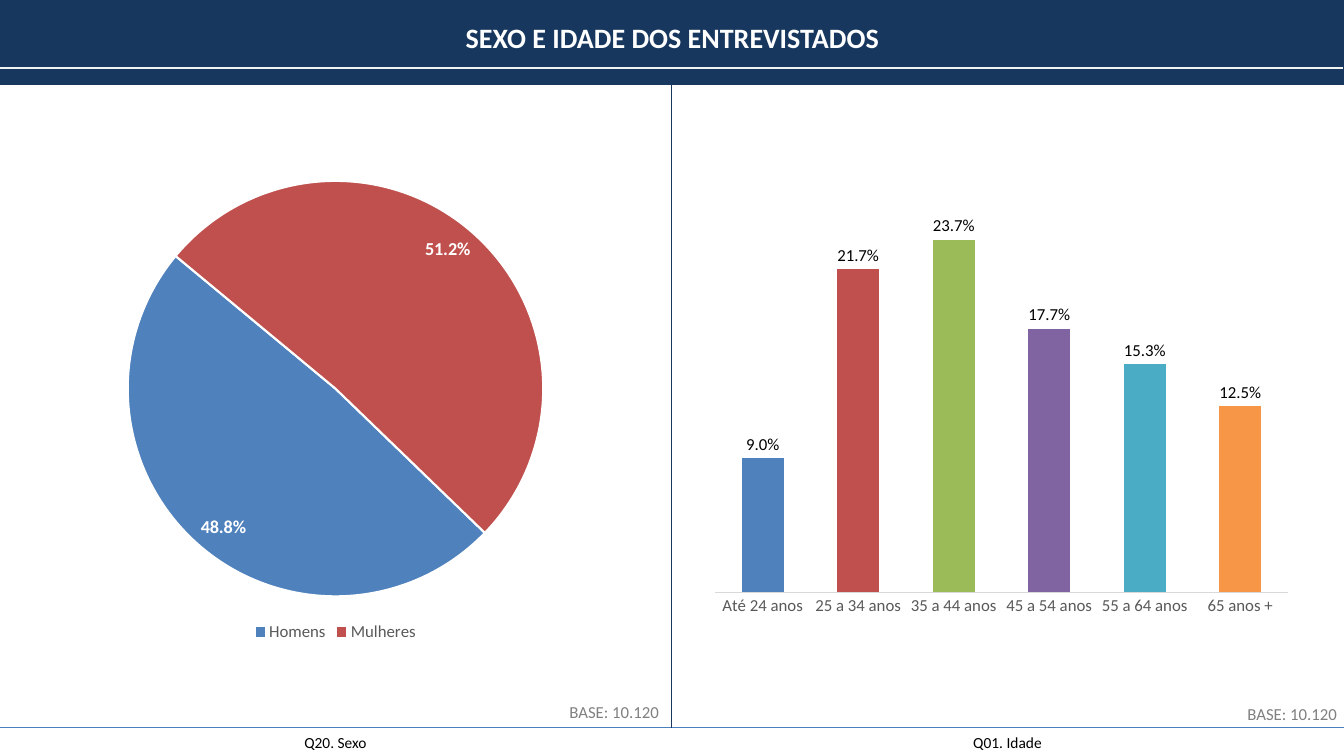
from lxml import etree
from pptx import Presentation
from pptx.chart.data import CategoryChartData
from pptx.dml.color import RGBColor
from pptx.enum.chart import XL_CHART_TYPE, XL_LABEL_POSITION, XL_LEGEND_POSITION, XL_TICK_MARK
from pptx.enum.shapes import MSO_CONNECTOR, MSO_SHAPE
from pptx.enum.text import MSO_AUTO_SIZE, PP_ALIGN
from pptx.oxml import parse_xml
from pptx.oxml.ns import nsdecls, qn
from pptx.util import Pt

PIE, COLUMN = XL_CHART_TYPE.PIE, XL_CHART_TYPE.COLUMN_CLUSTERED
INSIDE_END, OUTSIDE_END = XL_LABEL_POSITION.INSIDE_END, XL_LABEL_POSITION.OUTSIDE_END
LEGEND_BOTTOM, NO_TICK = XL_LEGEND_POSITION.BOTTOM, XL_TICK_MARK.NONE
STRAIGHT, RECTANGLE = MSO_CONNECTOR.STRAIGHT, MSO_SHAPE.RECTANGLE
CENTER, RIGHT = PP_ALIGN.CENTER, PP_ALIGN.RIGHT
GROW = MSO_AUTO_SIZE.SHAPE_TO_FIT_TEXT

SCALE = 9071  # EMU per px
WIDTH, HEIGHT = 1344, 756
HEADER_HEIGHT, FOOTER_TOP, MIDDLE = 85, 728, 671
FONT = "Calibri"
COLORS = {
    "navy": "17375E", "rule": "F2F2F2", "footer": "4B7EBC", "white": "FFFFFF",
    "black": "000000", "label": "595959", "base": "808080", "axis": "D9D9D9",
}
POINT_COLORS = ["4F81BD", "C0504D", "9BBB59", "8064A2", "4BACC6", "F79646"]
SEX = {"Homens": 0.488, "Mulheres": 0.512}
AGE = {
    "Até 24 anos": 0.09, "25 a 34 anos": 0.217, "35 a 44 anos": 0.237,
    "45 a 54 anos": 0.177, "55 a 64 anos": 0.153, "65 anos +": 0.125,
}


def px(*lengths):
    return [length * SCALE for length in lengths]


def color(name):
    return RGBColor.from_string(COLORS[name])


def style_font(font, size, name, bold=False):
    font.name, font.size, font.bold = FONT, Pt(size), bold
    font.color.rgb = color(name)


def add_text(slide, box, text, size, name, align=CENTER, bold=False):
    text_frame = slide.shapes.add_textbox(*px(*box)).text_frame
    text_frame.word_wrap = True
    text_frame.auto_size = GROW
    text_frame.text = text
    paragraph = text_frame.paragraphs[0]
    paragraph.alignment = align
    style_font(paragraph.runs[0].font, size, name, bold)


def add_line(slide, ends, name, width):
    line = slide.shapes.add_connector(STRAIGHT, *px(*ends))
    line.line.color.rgb = color(name)
    line.line.width = Pt(width)
    etree.SubElement(line._element.spPr, qn("a:effectLst"))
    return line


def add_header(slide, box, title):
    left, top, width, height = box
    band = slide.shapes.add_shape(RECTANGLE, *px(*box))
    band.shadow.inherit = False
    band.fill.solid()
    band.fill.fore_color.rgb = color("navy")
    band.line.fill.background()
    add_text(slide, (left + 1, top + 16, width, 44), title, 20, "white", bold=True)
    add_line(slide, (left - 2, top + 68, left + width - 1, top + 68), "rule", 1)
    return band


def set_plot_area(chart, x, y, width, height):
    """Fix the inner plot area as fractions of the chart."""
    plot_area = chart._chartSpace.chart.plotArea
    for layout in plot_area.findall(qn("c:layout")):
        plot_area.remove(layout)
    plot_area.insert(0, parse_xml(
        f'<c:layout {nsdecls("c")}><c:manualLayout><c:layoutTarget val="inner"/>'
        '<c:xMode val="edge"/><c:yMode val="edge"/>'
        f'<c:x val="{x}"/><c:y val="{y}"/><c:w val="{width}"/><c:h val="{height}"/>'
        '</c:manualLayout></c:layout>'))


def add_percent_chart(slide, box, kind, values, position, label_style):
    data = CategoryChartData(number_format="0.0%")
    data.categories = list(values)
    data.add_series("Series 1", list(values.values()))
    chart = slide.shapes.add_chart(kind, *px(*box), data).chart
    chart.has_title = False
    chart.has_legend = False
    style_font(chart.font, 10, "black")
    plot = chart.plots[0]
    plot.vary_by_categories = True
    for index in range(len(values)):
        fill = plot.series[0].points[index].format.fill
        fill.solid()
        fill.fore_color.rgb = RGBColor.from_string(POINT_COLORS[index])
    plot.has_data_labels = True
    labels = plot.data_labels
    labels.show_value = True
    labels.number_format, labels.number_format_is_linked = "0.0%", False
    labels.position = position
    style_font(labels.font, *label_style)
    return chart


def add_sex_chart(slide, box):
    chart = add_percent_chart(slide, box, PIE, SEX, INSIDE_END, (13, "white", True))
    set_plot_area(chart, 0.16, 0.03, 0.68, 0.87)
    pie = chart.plots[0]
    for index in range(len(SEX)):
        border = pie.series[0].points[index].format.line
        border.color.rgb = color("white")
        border.width = Pt(1.5)
    pie_xml = pie._element
    for angle in pie_xml.findall(qn("c:firstSliceAng")):
        pie_xml.remove(angle)
    etree.SubElement(pie_xml, qn("c:firstSliceAng")).set("val", "134")
    chart.has_legend = True
    chart.legend.position = LEGEND_BOTTOM
    chart.legend.include_in_layout = False
    style_font(chart.legend.font, 12, "label")


def add_age_chart(slide, box):
    chart = add_percent_chart(slide, box, COLUMN, AGE, OUTSIDE_END, (12, "black"))
    set_plot_area(chart, 0.02, 0.02, 0.96, 0.825)
    chart.plots[0].gap_width = 126
    chart.plots[0].overlap = -27
    value_axis, category_axis = chart.value_axis, chart.category_axis
    value_axis.minimum_scale, value_axis.maximum_scale = 0, 0.3
    value_axis.has_major_gridlines = False
    value_axis.visible = False
    category_axis.major_tick_mark = NO_TICK
    category_axis.format.line.color.rgb = color("axis")
    category_axis.format.line.width = Pt(0.75)
    style_font(category_axis.tick_labels.font, 12, "label")


def add_panel(slide, box, question, add_chart, chart_box, base_box):
    """Place a chart, its base and its question within a half of the slide."""
    left, top, width, height = box

    def inside(part):
        return (left + part[0], top + part[1], *part[2:])

    add_chart(slide, inside(chart_box))
    add_text(slide, inside(base_box), "BASE: 10.120", 12, "base", RIGHT)
    add_text(slide, (left, top + height, width, 29), question, 11, "black")


def main():
    presentation = Presentation()
    presentation.slide_width, presentation.slide_height = px(WIDTH, HEIGHT)
    slide = presentation.slides.add_slide(presentation.slide_layouts[6])

    # Header and dividers
    add_line(slide, (0, FOOTER_TOP, WIDTH, FOOTER_TOP), "footer", 0.75)
    header = add_header(slide, (-1, 0, WIDTH + 1, HEADER_HEIGHT),
                        "SEXO E IDADE DOS ENTREVISTADOS")
    divider = add_line(slide, (MIDDLE, HEADER_HEIGHT, MIDDLE, FOOTER_TOP), "navy", 1)
    divider.begin_connect(header, 2)
    divider.end_x = divider.begin_x

    # Sex on the left, age on the right
    panel_height = FOOTER_TOP - HEADER_HEIGHT
    add_panel(slide, (0, HEADER_HEIGHT, MIDDLE, panel_height), "Q20. Sexo",
              add_sex_chart, (30, 80, 611, 481), (439, 612, 230, 30))
    add_panel(slide, (MIDDLE + 1, HEADER_HEIGHT, MIDDLE, panel_height), "Q01. Idade",
              add_age_chart, (31, 50, 597, 541), (445, 614, 230, 30))

    presentation.save("out.pptx")


if __name__ == "__main__":
    main()
